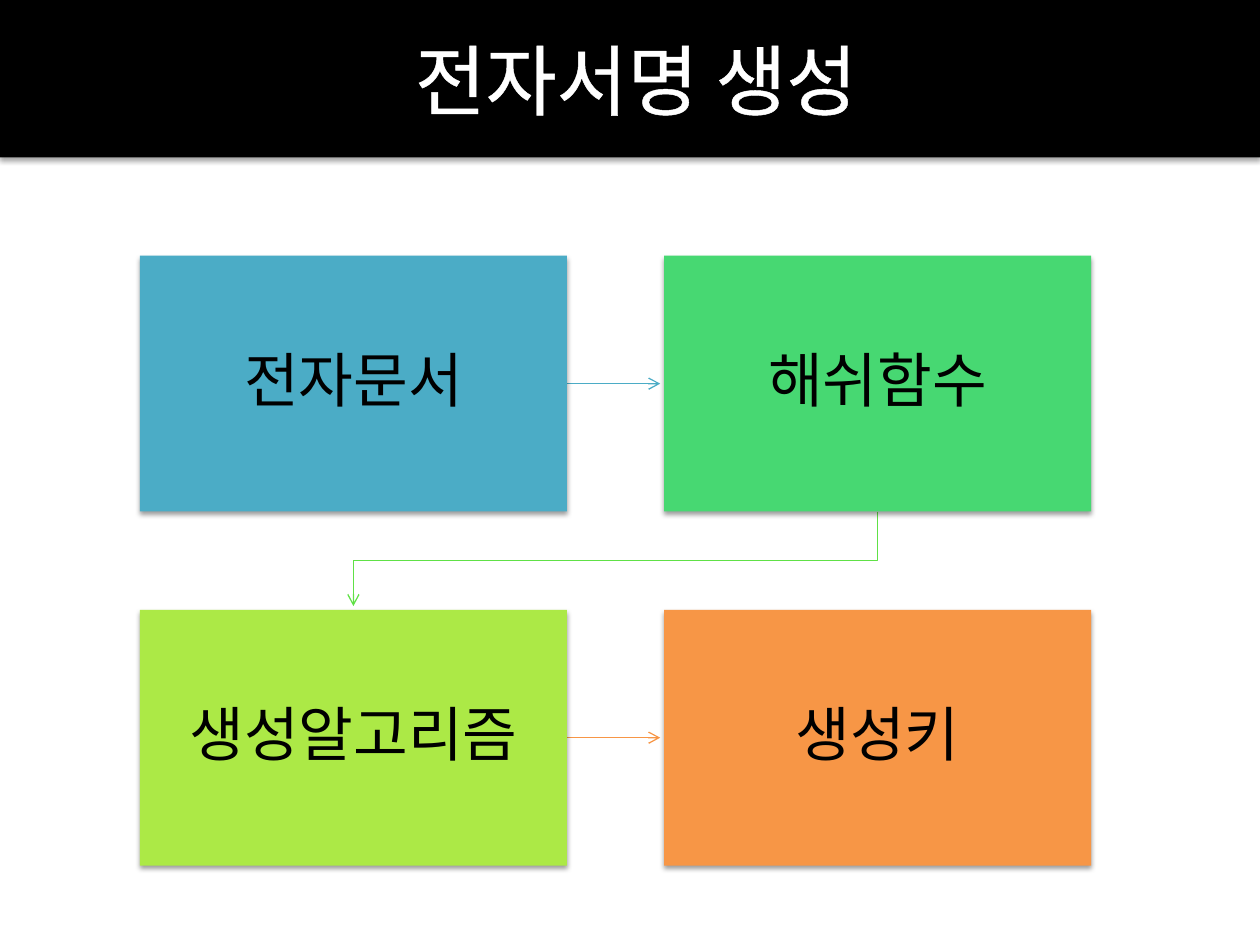
from dataclasses import dataclass

from lxml.etree import SubElement
from pptx import Presentation
from pptx.dml.color import RGBColor
from pptx.enum.shapes import MSO_CONNECTOR, MSO_SHAPE
from pptx.enum.text import MSO_ANCHOR, MSO_AUTO_SIZE, PP_ALIGN
from pptx.oxml import parse_xml
from pptx.oxml.ns import nsdecls, qn
from pptx.util import Inches, Pt


@dataclass(frozen=True)
class Theme:
    font: str = "Noto Sans CJK KR"
    title_size: float = 44
    step_size: float = 34
    line_width: float = 0.75
    title_outline: float = 1.45
    black: str = "000000"
    white: str = "FFFFFF"
    blue: str = "4BACC6"
    green: str = "47D872"
    lime: str = "ACE946"
    orange: str = "F79646"
    bend: str = "60E146"


@dataclass(frozen=True)
class Grid:
    """Two columns and two rows of equal boxes, in inches."""
    left: float = 1.11
    top: float = 2.03
    width: float = 3.39
    height: float = 2.03
    column_step: float = 4.16
    row_step: float = 2.81
    arrow_gap: float = 0.03
    padding: float = 0.26

    def cell(self, column, row):
        return (self.left + column * self.column_step,
                self.top + row * self.row_step)


class FlowSlide:
    def __init__(self, deck, theme, grid):
        self.theme, self.grid = theme, grid
        self.page = deck.slides.add_slide(deck.slide_layouts[5])
        self.width, self.height = deck.slide_width, deck.slide_height

    def style_text(self, shape, text, size, color):
        frame = shape.text_frame
        frame.text = text
        frame.word_wrap = True
        frame.auto_size = MSO_AUTO_SIZE.NONE
        frame.vertical_anchor = MSO_ANCHOR.MIDDLE
        para = frame.paragraphs[0]
        para.alignment = PP_ALIGN.CENTER
        span = para.runs[0]
        span.font.size = Pt(size)
        span.font.color.rgb = RGBColor.from_string(color)
        span.font.name = self.theme.font
        properties = span.font._element
        SubElement(properties, qn("a:ea"), typeface=self.theme.font)
        return para, properties

    def block(self, left, top, width, height, color, opacity, distance):
        box = self.page.shapes.add_shape(
            MSO_SHAPE.RECTANGLE, left, top, width, height)
        box.fill.solid()
        box.fill.fore_color.rgb = RGBColor.from_string(color)
        box.line.fill.background()
        box._element.spPr.append(parse_xml(
            f'<a:effectLst {nsdecls("a")}><a:outerShdw blurRad="{Pt(3.1)}" '
            f'dist="{Pt(distance)}" dir="5400000" rotWithShape="0">'
            f'<a:srgbClr val="{self.theme.black}"><a:alpha val="{opacity * 1000}"/>'
            '</a:srgbClr></a:outerShdw></a:effectLst>'))
        return box

    def title(self, text):
        title = self.page.shapes.title
        band_height = round(self.height / 6)
        band = self.block(0, 0, self.width, band_height, self.theme.black, 35, 1.8)
        title._element.addprevious(band._element)
        title.left, title.top = round(self.width * 0.055), 0
        title.width, title.height = round(self.width * 0.9), band_height
        properties = self.style_text(
            title, text, self.theme.title_size, self.theme.white)[1]
        properties.insert(0, parse_xml(
            f'<a:ln {nsdecls("a")} w="{Pt(self.theme.title_outline)}"><a:solidFill>'
            f'<a:srgbClr val="{self.theme.white}"/></a:solidFill></a:ln>'))

    def step(self, column, row, text, color):
        grid = self.grid
        left, top = grid.cell(column, row)
        box = self.block(Inches(left), Inches(top), Inches(grid.width),
                         Inches(grid.height), color, 38, 1.6)
        frame = box.text_frame
        frame.margin_left = frame.margin_right = Inches(grid.padding)
        frame.margin_top = frame.margin_bottom = Inches(grid.padding)
        para = self.style_text(box, text, self.theme.step_size, self.theme.black)[0]
        para.line_spacing = 0.9

    def style_arrow(self, arrow, color):
        arrow.line.color.rgb = RGBColor.from_string(color)
        arrow.line.width = Pt(self.theme.line_width)
        SubElement(arrow.line._get_or_add_ln(), qn("a:tailEnd"), type="arrow")
        SubElement(arrow._element.spPr, qn("a:effectLst"))

    def arrow_across(self, row, color):
        grid = self.grid
        left, top = grid.cell(0, row)
        end = grid.cell(1, row)[0] - grid.arrow_gap
        middle = Inches(top + grid.height / 2)
        arrow = self.page.shapes.add_connector(
            MSO_CONNECTOR.STRAIGHT, Inches(left + grid.width), middle,
            Inches(end), middle)
        self.style_arrow(arrow, color)

    def arrow_to_next_row(self, color):
        grid = self.grid
        start_x = grid.cell(1, 0)[0] + grid.width / 2
        end_x = grid.cell(0, 1)[0] + grid.width / 2
        start_y = grid.top + grid.height
        next_top = grid.cell(0, 1)[1]
        bend_y = (start_y + next_top) / 2
        points = [(start_x, bend_y), (end_x, bend_y),
                  (end_x, next_top - grid.arrow_gap)]
        builder = self.page.shapes.build_freeform(
            Inches(start_x), Inches(start_y))
        builder.add_line_segments(
            [(Inches(x), Inches(y)) for x, y in points], close=False)
        arrow = builder.convert_to_shape()
        arrow.fill.background()
        self.style_arrow(arrow, color)


def main():
    theme = Theme()
    deck = Presentation()
    deck.slide_width, deck.slide_height = Inches(10), Inches(7.5)
    slide = FlowSlide(deck, theme, Grid())

    # Heading band
    slide.title("전자서명 생성")

    # Arrows between the steps
    slide.arrow_across(0, theme.blue)
    slide.arrow_to_next_row(theme.bend)
    slide.arrow_across(1, theme.orange)

    # Steps, row by row
    steps = [("전자문서", theme.blue), ("해쉬함수", theme.green),
             ("생성알고리즘", theme.lime), ("생성키", theme.orange)]
    for index, (text, color) in enumerate(steps):
        row, column = divmod(index, 2)
        slide.step(column, row, text, color)

    deck.save("out.pptx")


if __name__ == "__main__":
    main()
